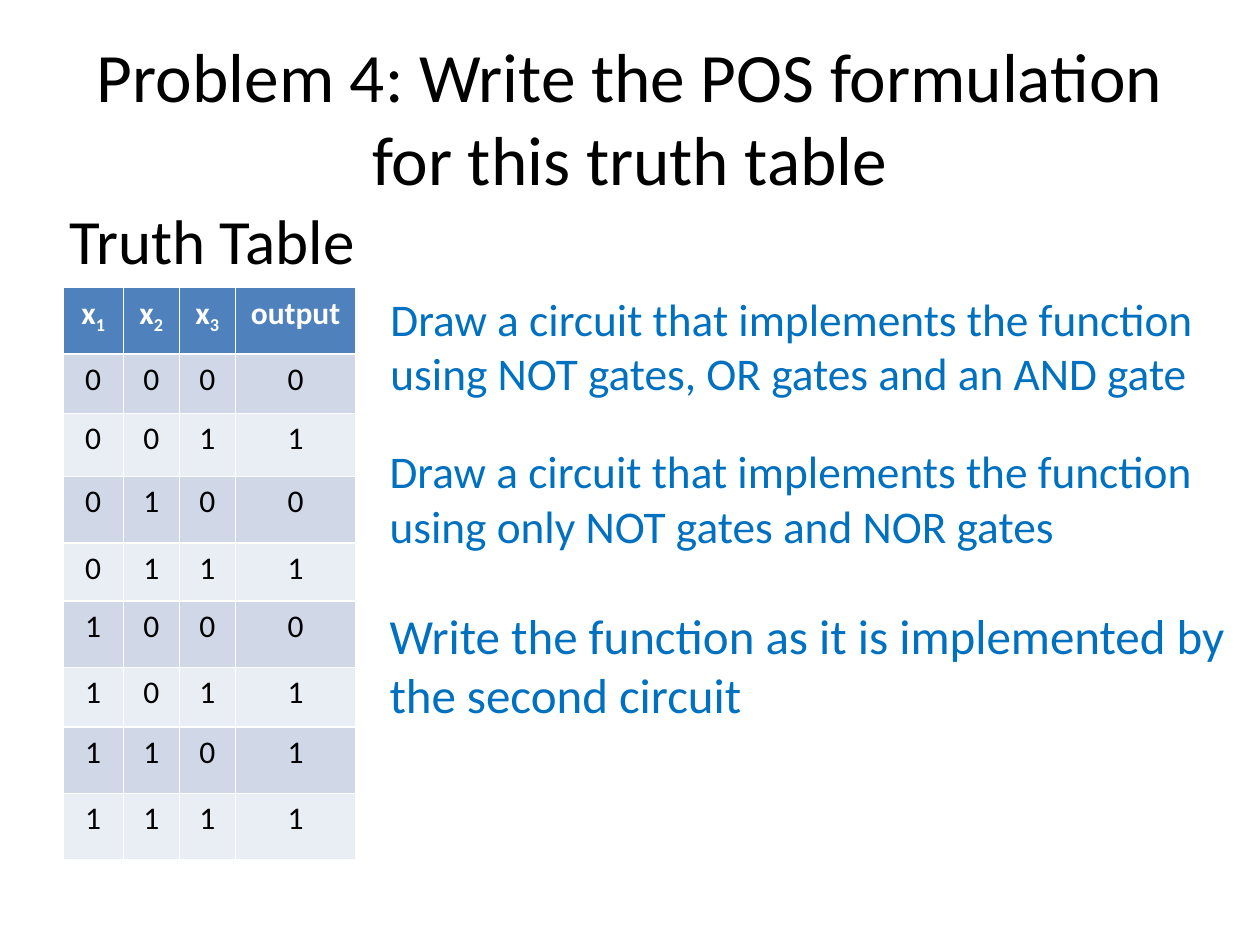
"""Build a slide that poses a truth table problem with three tasks."""
from dataclasses import dataclass
from itertools import product

from pptx import Presentation
from pptx.dml.color import RGBColor
from pptx.enum.text import MSO_ANCHOR, PP_ALIGN
from pptx.util import Pt

LEFT, CENTER = PP_ALIGN.LEFT, PP_ALIGN.CENTER
TOP, MIDDLE = MSO_ANCHOR.TOP, MSO_ANCHOR.MIDDLE
BLANK_LAYOUT = 6


@dataclass(frozen=True)
class Theme:
    font: str = "Calibri"
    text: RGBColor = RGBColor(0x00, 0x00, 0x00)
    task: RGBColor = RGBColor(0x00, 0x70, 0xC0)
    header_text: RGBColor = RGBColor(0xFF, 0xFF, 0xFF)
    header_fill: RGBColor = RGBColor(0x4F, 0x81, 0xBD)
    band_fills: tuple = (RGBColor(0xD0, 0xD8, 0xE8), RGBColor(0xE9, 0xED, 0xF4))
    title_size: float = 39.6
    heading_size: float = 36
    task_size: float = 25.9
    last_task_size: float = 28
    table_size: float = 18


THEME = Theme()
COLUMN_WIDTHS = (34.5, 32, 32, 69)
ROW_HEIGHTS = (38, 34, 36, 38, 33, 38, 34, 38, 38)
HEADERS = (("x", "1"), ("x", "2"), ("x", "3"), ("output", ""))
OUTPUTS = (0, 1, 0, 1, 0, 1, 1, 1)
TASKS = (
    (216, 162.7, THEME.task_size,
     "Draw a circuit that implements the function using NOT gates, OR gates and an AND gate"),
    (215.5, 249.8, THEME.task_size,
     "Draw a circuit that implements the function using only NOT gates and NOR gates"),
    (215.5, 342.7, THEME.last_task_size,
     "Write the function as it is implemented by the second circuit"),
)


def style_paragraph(paragraph, size, color, alignment=LEFT, bold=False):
    paragraph.alignment = alignment
    font = paragraph.font
    font.name = THEME.font
    font.size = Pt(size)
    font.bold = bold
    font.color.rgb = color


def add_text(slide, box, text, size, color, alignment=LEFT, anchor=TOP):
    shape = slide.shapes.add_textbox(*map(Pt, box))
    frame = shape.text_frame
    frame.word_wrap = True
    frame.vertical_anchor = anchor
    paragraph = frame.paragraphs[0]
    paragraph.add_run().text = text
    style_paragraph(paragraph, size, color, alignment)


def fill_cell(cell, text, fill, color, subscript="", bold=False):
    cell.fill.solid()
    cell.fill.fore_color.rgb = fill
    paragraph = cell.text_frame.paragraphs[0]
    paragraph.add_run().text = text
    if subscript:
        run = paragraph.add_run()
        run.text = subscript
        run._r.get_or_add_rPr().set("baseline", "-25000")
    style_paragraph(paragraph, THEME.table_size, color, CENTER, bold)


def add_truth_table(slide, left, top):
    frame = slide.shapes.add_table(
        len(ROW_HEIGHTS), len(COLUMN_WIDTHS), Pt(left), Pt(top),
        Pt(sum(COLUMN_WIDTHS)), Pt(sum(ROW_HEIGHTS)))
    table = frame.table
    for column, width in zip(table.columns, COLUMN_WIDTHS):
        column.width = Pt(width)
    for row, height in zip(table.rows, ROW_HEIGHTS):
        row.height = Pt(height)
    for column, (name, subscript) in enumerate(HEADERS):
        fill_cell(table.cell(0, column), name, THEME.header_fill,
                  THEME.header_text, subscript, bold=True)
    for index, (inputs, output) in enumerate(zip(product((0, 1), repeat=3), OUTPUTS)):
        for column, value in enumerate((*inputs, output)):
            fill_cell(table.cell(index + 1, column), str(value),
                      THEME.band_fills[index % 2], THEME.text)


def main():
    presentation = Presentation()
    presentation.slide_width = Pt(720)
    presentation.slide_height = Pt(540)
    slide = presentation.slides.add_slide(presentation.slide_layouts[BLANK_LAYOUT])
    add_text(slide, (36, 21.6, 648, 90),
             "Problem 4: Write the POS formulation for this truth table",
             THEME.title_size, THEME.text, CENTER, MIDDLE)
    add_text(slide, (24.5, 111.6, 189.4, 51), " Truth Table",
             THEME.heading_size, THEME.text)
    add_truth_table(slide, 36, 164.4)
    for left, top, size, text in TASKS:
        add_text(slide, (left, top, 493.2, 79.2), text, size, THEME.task)
    presentation.save("out.pptx")


if __name__ == "__main__":
    main()
